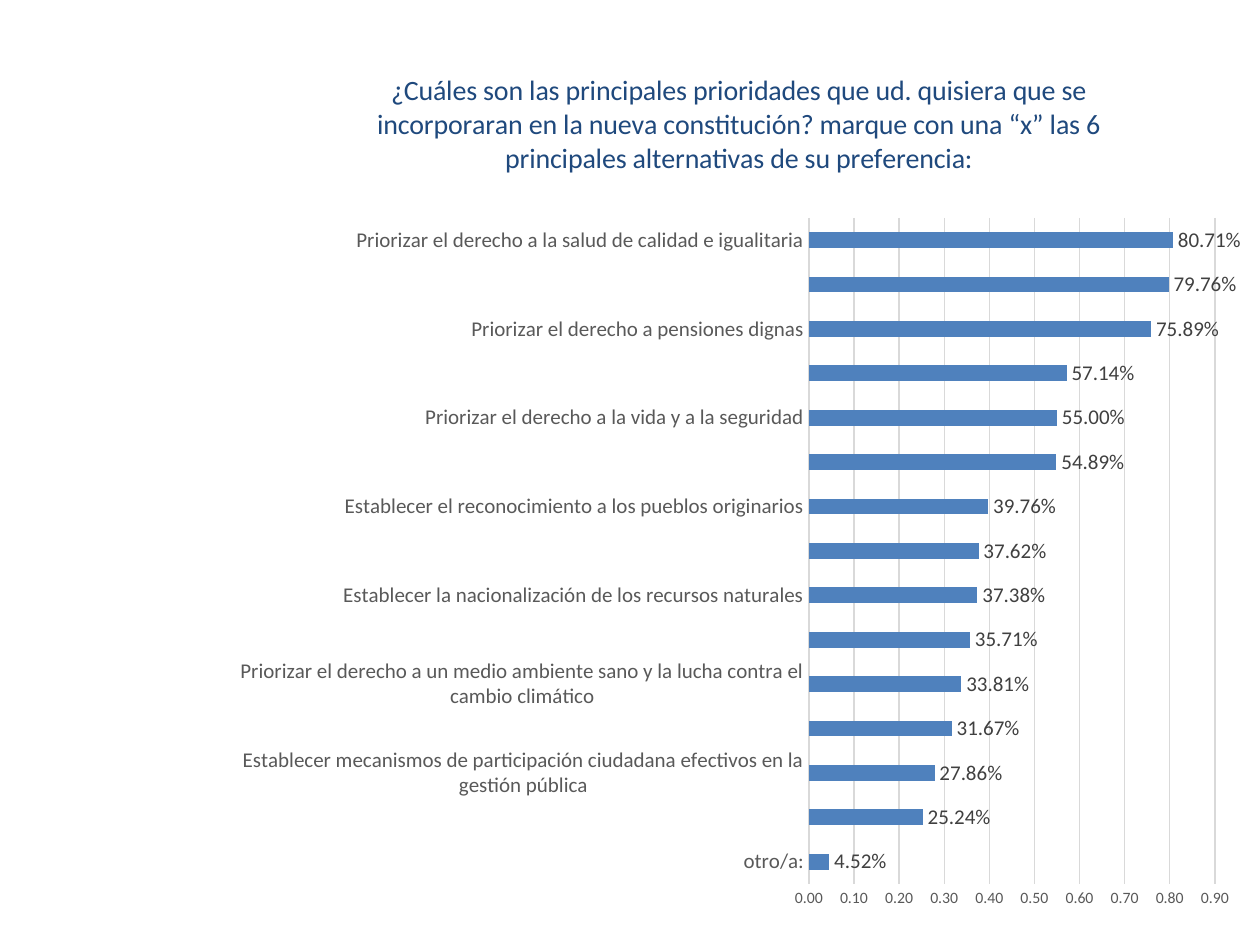
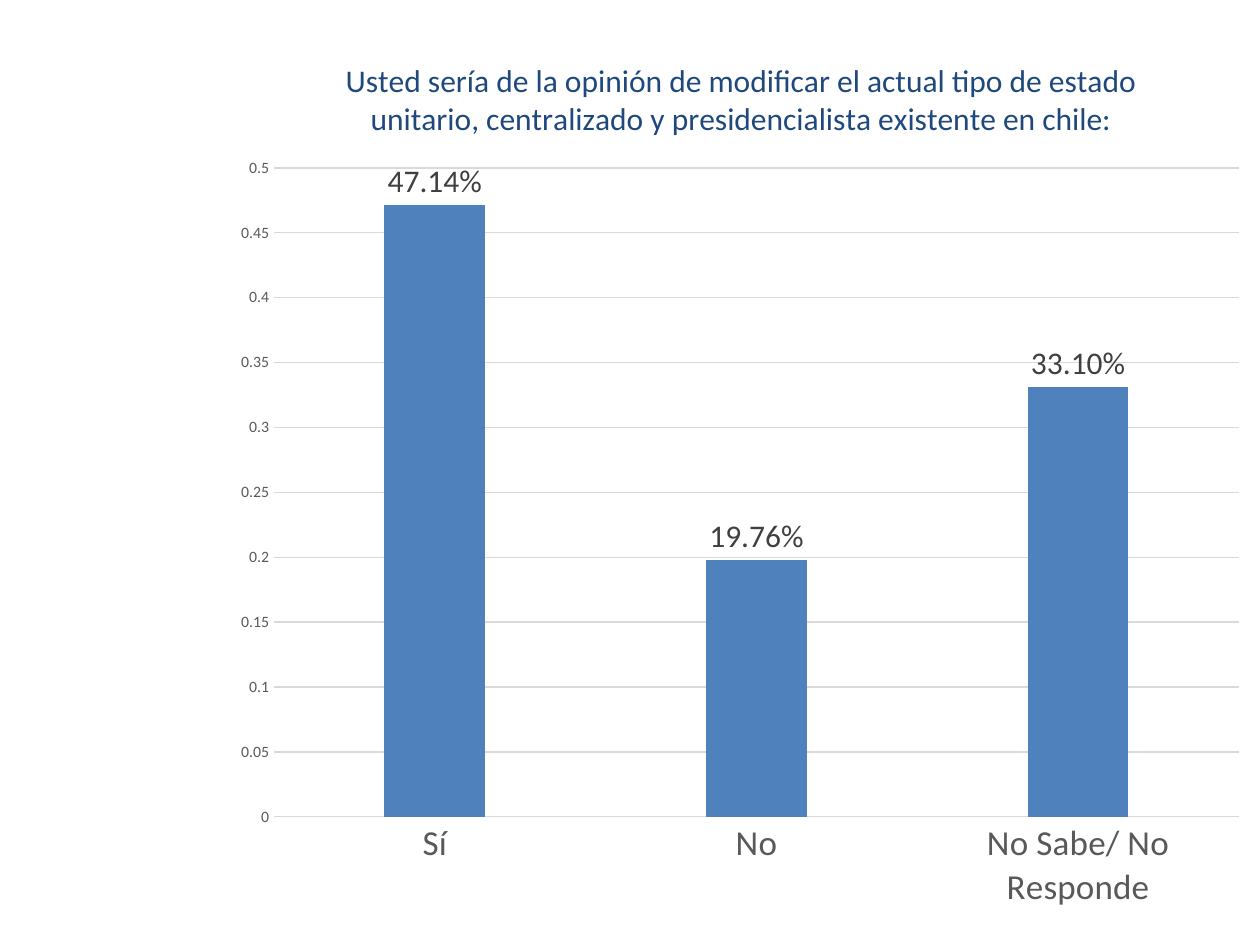
from dataclasses import dataclass

from lxml import etree
from pptx import Presentation
from pptx.chart import data as chart_data
from pptx.dml.color import RGBColor
from pptx.enum import chart as kinds
from pptx.oxml import ns
from pptx.util import Emu, Pt

EMU_PER_PX = 914400 / 126
PAGE_WIDTH, PAGE_HEIGHT = 1260, 945


@dataclass(frozen=True)
class Theme:
    font: str = "Calibri"
    title: str = "1F497D"
    bar: str = "4F81BD"
    axis_text: str = "595959"
    label_text: str = "404040"
    grid: str = "D9D9D9"
    base_text: str = "000000"
    base_size: int = 10
    scale_size: int = 9
    line_width: float = 0.75


@dataclass(frozen=True)
class Area:
    left: int
    top: int
    width: int
    height: int


@dataclass(frozen=True)
class Survey:
    question: str
    answers: dict[str, float]
    kind: kinds.XL_CHART_TYPE
    frame: Area
    plot: Area
    title_at: tuple[int, int]
    title_size: int
    category_size: int
    label_size: int
    scale_max: float
    scale_step: float
    scale_format: str
    gap: int
    overlap: int = 0


THEME = Theme()

PRIORITIES = Survey(
    question="¿Cuáles son las principales prioridades que ud. quisiera que se "
    "incorporaran en la nueva constitución? marque con una “x” las 6 "
    "principales alternativas de su preferencia:",
    answers={
        "otro/a:": 0.0452,
        "Cambiar el actual tipo de estado unitario, presidencial y centralista por otro.": 0.2524,
        "Establecer mecanismos de participación ciudadana efectivos en la gestión pública": 0.2786,
        "Priorizar el derecho a la igualdad y equidad de género": 0.3167,
        "Priorizar el derecho a un medio ambiente sano y la lucha contra el cambio climático": 0.3381,
        "Establecer mecanismos de democracia directa "
        "(plebiscitos, iniciativas populares de ley, etc.)": 0.3571,
        "Establecer la nacionalización de los recursos naturales": 0.3738,
        "Fortalecer la autonomía y garantizar recursos para las regiones": 0.3762,
        "Establecer el reconocimiento a los pueblos originarios": 0.3976,
        "Establecer el agua como un bien de uso público": 0.5489,
        "Priorizar el derecho a la vida y a la seguridad": 0.55,
        "Priorizar el derecho al trabajo y proteger a los desempleados": 0.5714,
        "Priorizar el derecho a pensiones dignas": 0.7589,
        "Priorizar el derecho a la educación gratuita y de calidad": 0.7976,
        "Priorizar el derecho a la salud de calidad e igualitaria": 0.8071,
    },
    kind=kinds.XL_CHART_TYPE.BAR_CLUSTERED,
    frame=Area(220, 62, 1029, 863),
    plot=Area(809, 218, 406, 666),
    title_at=(372, 66),
    title_size=16,
    category_size=12,
    label_size=12,
    scale_max=0.9,
    scale_step=0.1,
    scale_format="0.00",
    gap=182,
)

STATE_TYPE = Survey(
    question="Usted sería de la opinión de modificar el actual tipo de estado "
    "unitario, centralizado y presidencialista existente en chile:",
    answers={"Sí": 0.4714, "No": 0.1976, "No Sabe/ No Responde": 0.331},
    kind=kinds.XL_CHART_TYPE.COLUMN_CLUSTERED,
    frame=Area(220, 21, 1040, 906),
    plot=Area(274, 168, 965, 649),
    title_at=(340, 53),
    title_size=18,
    category_size=20,
    label_size=18,
    scale_max=0.5,
    scale_step=0.05,
    scale_format="General",
    gap=219,
    overlap=-27,
)


def px(length: int) -> Emu:
    return Emu(round(length * EMU_PER_PX))


def style_font(font, size: int, color: str) -> None:
    font.name = THEME.font
    font.size = Pt(size)
    font.bold = False
    font.color.rgb = RGBColor.from_string(color)


def style_line(line) -> None:
    line.color.rgb = RGBColor.from_string(THEME.grid)
    line.width = Pt(THEME.line_width)


def place(parent, index: int, settings: dict[str, object]) -> None:
    """Give a chart part a manual layout as child number index."""
    for old in parent.findall(ns.qn("c:layout")):
        parent.remove(old)
    layout = etree.Element(ns.qn("c:layout"))
    manual = etree.SubElement(layout, ns.qn("c:manualLayout"))
    for name, value in settings.items():
        etree.SubElement(manual, ns.qn(f"c:{name}")).set("val", str(value))
    parent.insert(index, layout)


def place_parts(chart, survey: Survey) -> None:
    """Fix the title and the inner plot area at page positions."""
    frame, plot = survey.frame, survey.plot

    def origin(left: int, top: int) -> dict[str, object]:
        return {
            "xMode": "edge",
            "yMode": "edge",
            "x": (left - frame.left) / frame.width,
            "y": (top - frame.top) / frame.height,
        }

    size = {"w": plot.width / frame.width, "h": plot.height / frame.height}
    place(chart.chart_title._element, 1, origin(*survey.title_at))
    plot_area = chart._chartSpace.chart.plotArea
    place(plot_area, 0, {"layoutTarget": "inner"} | origin(plot.left, plot.top) | size)


def style_axes(chart, survey: Survey) -> None:
    categories, scale = chart.category_axis, chart.value_axis
    for axis, size in ((categories, survey.category_size), (scale, THEME.scale_size)):
        axis.major_tick_mark = axis.minor_tick_mark = kinds.XL_TICK_MARK.NONE
        style_font(axis.tick_labels.font, size, THEME.axis_text)
    categories.has_major_gridlines = False
    style_line(categories.format.line)
    scale.format.line.fill.background()
    scale.has_major_gridlines = True
    style_line(scale.major_gridlines.format.line)
    scale.minimum_scale, scale.maximum_scale = 0, survey.scale_max
    scale.major_unit = survey.scale_step
    scale.tick_labels.number_format = survey.scale_format
    scale.tick_labels.number_format_is_linked = False


def style_bars(plot, survey: Survey) -> None:
    plot.vary_by_categories = False
    plot.gap_width, plot.overlap = survey.gap, survey.overlap
    fill = plot.series[0].format.fill
    fill.solid()
    fill.fore_color.rgb = RGBColor.from_string(THEME.bar)
    plot.has_data_labels = True
    labels = plot.data_labels
    labels.show_value = True
    labels.number_format, labels.number_format_is_linked = "0.00%", False
    labels.position = kinds.XL_LABEL_POSITION.OUTSIDE_END
    style_font(labels.font, survey.label_size, THEME.label_text)


def add_survey_page(deck, survey: Survey) -> None:
    page = deck.slides.add_slide(deck.slide_layouts[6])
    results = chart_data.CategoryChartData()
    results.categories = list(survey.answers)
    results.add_series("Series 1", list(survey.answers.values()))
    frame = survey.frame
    chart = page.shapes.add_chart(
        survey.kind, px(frame.left), px(frame.top), px(frame.width), px(frame.height), results
    ).chart
    style_font(chart.font, THEME.base_size, THEME.base_text)
    chart.has_legend = False
    chart.has_title = True
    para = chart.chart_title.text_frame.paragraphs[0]
    para.add_run().text = survey.question
    style_font(para.font, survey.title_size, THEME.title)
    style_axes(chart, survey)
    style_bars(chart.plots[0], survey)
    place_parts(chart, survey)


def main() -> None:
    deck = Presentation()
    deck.slide_width, deck.slide_height = px(PAGE_WIDTH), px(PAGE_HEIGHT)
    for survey in (PRIORITIES, STATE_TYPE):
        add_survey_page(deck, survey)
    deck.save("out.pptx")


if __name__ == "__main__":
    main()
